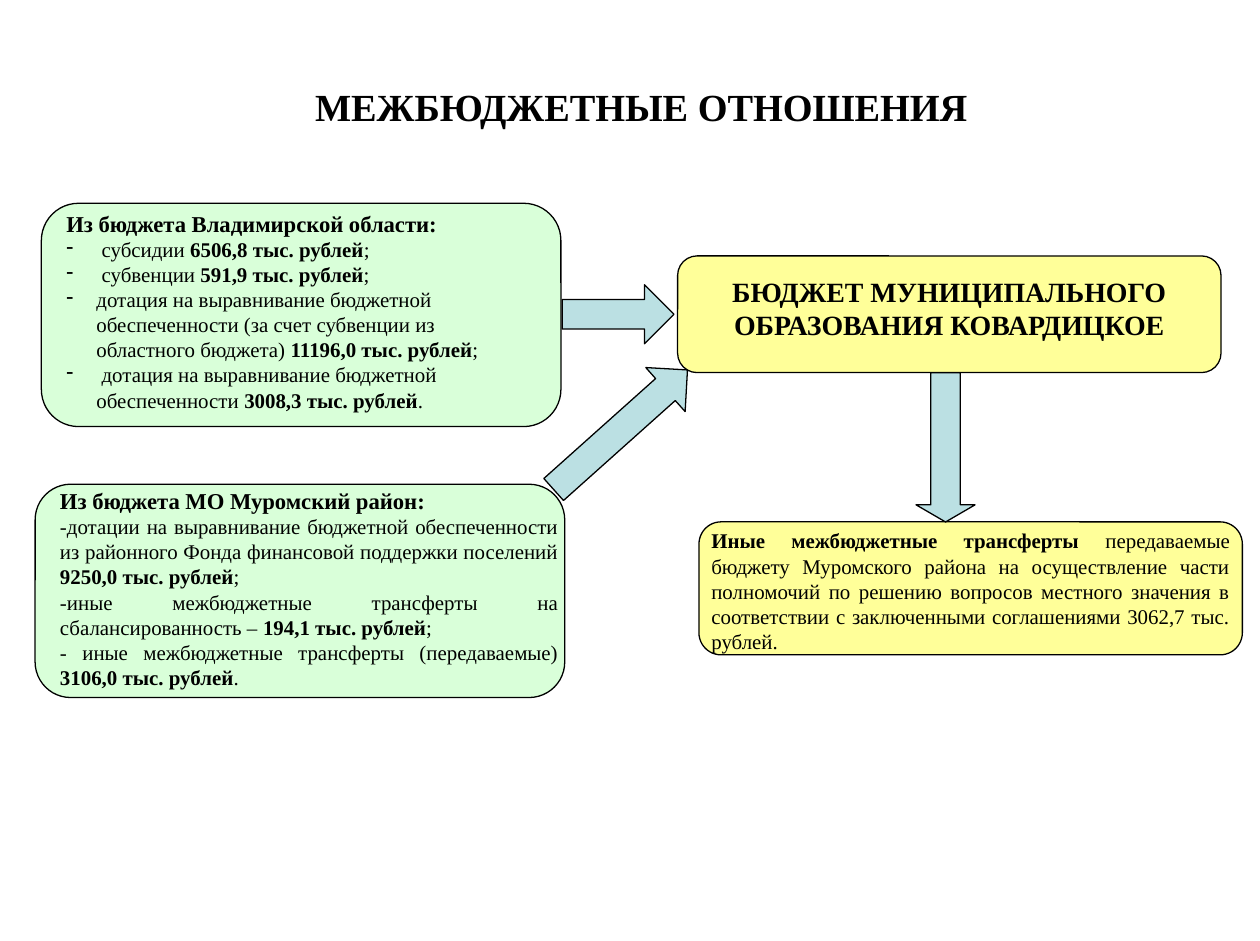
from lxml import etree
from pptx import Presentation
from pptx.dml.color import RGBColor
from pptx.enum import shapes, text
from pptx.oxml import ns
from pptx.util import Inches, Pt

BLACK = RGBColor(0, 0, 0)
YELLOW = RGBColor(0xFF, 0xFF, 0x99)
GREEN = RGBColor(0xCC, 0xFF, 0xCC)
BLUE = RGBColor(0xBB, 0xE0, 0xE3)
FONT = "Times New Roman"
LEFT, CENTER, JUSTIFY = text.PP_ALIGN.LEFT, text.PP_ALIGN.CENTER, text.PP_ALIGN.JUSTIFY
PANEL = shapes.MSO_SHAPE.FLOWCHART_ALTERNATE_PROCESS
RIGHT_ARROW = shapes.MSO_SHAPE.RIGHT_ARROW
DOWN_ARROW = shapes.MSO_SHAPE.DOWN_ARROW

REGION_GRANTS = [
    [(" субсидии ", False), ("6506,8 тыс. рублей", True), (";", False)],
    [(" субвенции ", False), ("591,9 тыс. рублей", True), (";", False)],
    [("дотация на выравнивание бюджетной обеспеченности (за счет субвенции из "
      "областного бюджета) ", False), ("11196,0 тыс. рублей", True), (";", False)],
    [(" дотация на выравнивание бюджетной обеспеченности ", False),
     ("3008,3 тыс. рублей", True), (".", False)],
]
DISTRICT_GRANTS = [
    [("-дотации на выравнивание бюджетной обеспеченности из районного Фонда "
      "финансовой поддержки поселений ", False), ("9250,0 тыс. рублей", True), (";", False)],
    [("-иные межбюджетные трансферты на сбалансированность – ", False),
     ("194,1 тыс. рублей", True), (";", False)],
    [("- иные межбюджетные трансферты (передаваемые) ", False),
     ("3106,0 тыс. рублей", True), (".", False)],
]
TRANSFERS = [
    ("Иные межбюджетные трансферты ", True),
    ("передаваемые бюджету Муромского района на осуществление части полномочий "
     "по решению вопросов местного значения в соответствии с заключенными "
     "соглашениями 3062,7 тыс. рублей.", False),
]


def write(paragraph, runs, size=12, align=LEFT, bullet=None):
    """Fill a paragraph with (wording, bold) runs in one format."""
    if bullet:
        properties = paragraph._p.get_or_add_pPr()
        properties.set("marL", str(Inches(0.24)))
        properties.set("indent", str(-Inches(0.24)))
        etree.SubElement(properties, ns.qn("a:buChar")).set("char", bullet)
    paragraph.alignment = align
    for wording, bold in runs:
        run = paragraph.add_run()
        run.text = wording
        run.font.name = FONT
        run.font.size = Pt(size)
        run.font.bold = bold
        run.font.color.rgb = BLACK


def add_figure(slide, kind, box, color, opacity=None, rotation=0, head=None):
    """Add a thinly outlined preset shape."""
    shape = slide.shapes.add_shape(kind, *map(Inches, box))
    shape.shadow.inherit = False
    shape.fill.solid()
    shape.fill.fore_color.rgb = color
    shape.line.color.rgb = BLACK
    shape.line.width = Pt(0.75)
    shape.rotation = rotation
    if opacity:
        tint = shape._element.spPr.find(ns.qn("a:solidFill"))[0]
        etree.SubElement(tint, ns.qn("a:alpha")).set("val", str(opacity * 1000))
    if head:
        shape.adjustments[0] = 0.5
        shape.adjustments[1] = head


def add_text_frame(slide, box):
    """Add a wrapping text box and return its frame."""
    frame = slide.shapes.add_textbox(*map(Inches, box)).text_frame
    frame.word_wrap = True
    return frame


def add_title(slide, box):
    """Place and format the title."""
    title = slide.shapes.title
    title.left, title.top, title.width, title.height = map(Inches, box)
    frame = title.text_frame
    frame.auto_size = text.MSO_AUTO_SIZE.NONE
    frame.vertical_anchor = text.MSO_ANCHOR.MIDDLE
    write(frame.paragraphs[0], [("МЕЖБЮДЖЕТНЫЕ ОТНОШЕНИЯ", True)], size=22, align=CENTER)


def add_municipal_budget(slide, box):
    """Add the receiving budget panel."""
    left, top, width, height = box
    add_figure(slide, PANEL, box, YELLOW)
    frame = add_text_frame(slide, (left, top + 0.1, width, height - 0.3))
    write(frame.paragraphs[0], [("БЮДЖЕТ МУНИЦИПАЛЬНОГО ОБРАЗОВАНИЯ КОВАРДИЦКОЕ", True)],
          size=16, align=CENTER)


def add_transfers(slide, box):
    """Add the outgoing transfers panel."""
    add_figure(slide, PANEL, box, YELLOW)
    write(add_text_frame(slide, box).paragraphs[0], TRANSFERS, align=JUSTIFY)


def add_source(slide, box, heading, grants, offset, text_width, **style):
    """Add a green panel listing the grants from one budget."""
    left, top, width, height = box
    add_figure(slide, PANEL, box, GREEN, opacity=74)
    frame = add_text_frame(slide, (left + 0.1, top + offset, text_width, 1.73))
    write(frame.paragraphs[0], [(heading, True)], size=13)
    for grant in grants:
        write(frame.add_paragraph(), grant, **style)


def main():
    """Build the slide and save it."""
    presentation = Presentation()
    presentation.slide_width = Inches(10.04)
    presentation.slide_height = Inches(7.5)
    slide = presentation.slides.add_slide(presentation.slide_layouts[5])
    add_title(slide, (0.59, 0.62, 9.04, 0.46))
    add_municipal_budget(slide, (5.4, 2.04, 4.33, 0.93))
    add_transfers(slide, (5.57, 4.16, 4.33, 1.06))
    add_figure(slide, DOWN_ARROW, (7.3, 2.97, 0.47, 1.19), BLUE, head=0.29)
    add_figure(slide, RIGHT_ARROW, (4.48, 2.27, 0.89, 0.47), BLUE, head=0.5)
    add_figure(slide, RIGHT_ARROW, (4.23, 3.19, 1.43, 0.47), BLUE, rotation=318.2, head=0.5)
    add_source(slide, (0.33, 1.62, 4.14, 1.78), "Из бюджета Владимирской области:",
               REGION_GRANTS, 0, 3.94, bullet="-")
    add_source(slide, (0.28, 3.86, 4.22, 1.7), "Из бюджета МО Муромский район:",
               DISTRICT_GRANTS, -0.03, 4.17, align=JUSTIFY)
    presentation.save("out.pptx")


if __name__ == "__main__":
    main()
